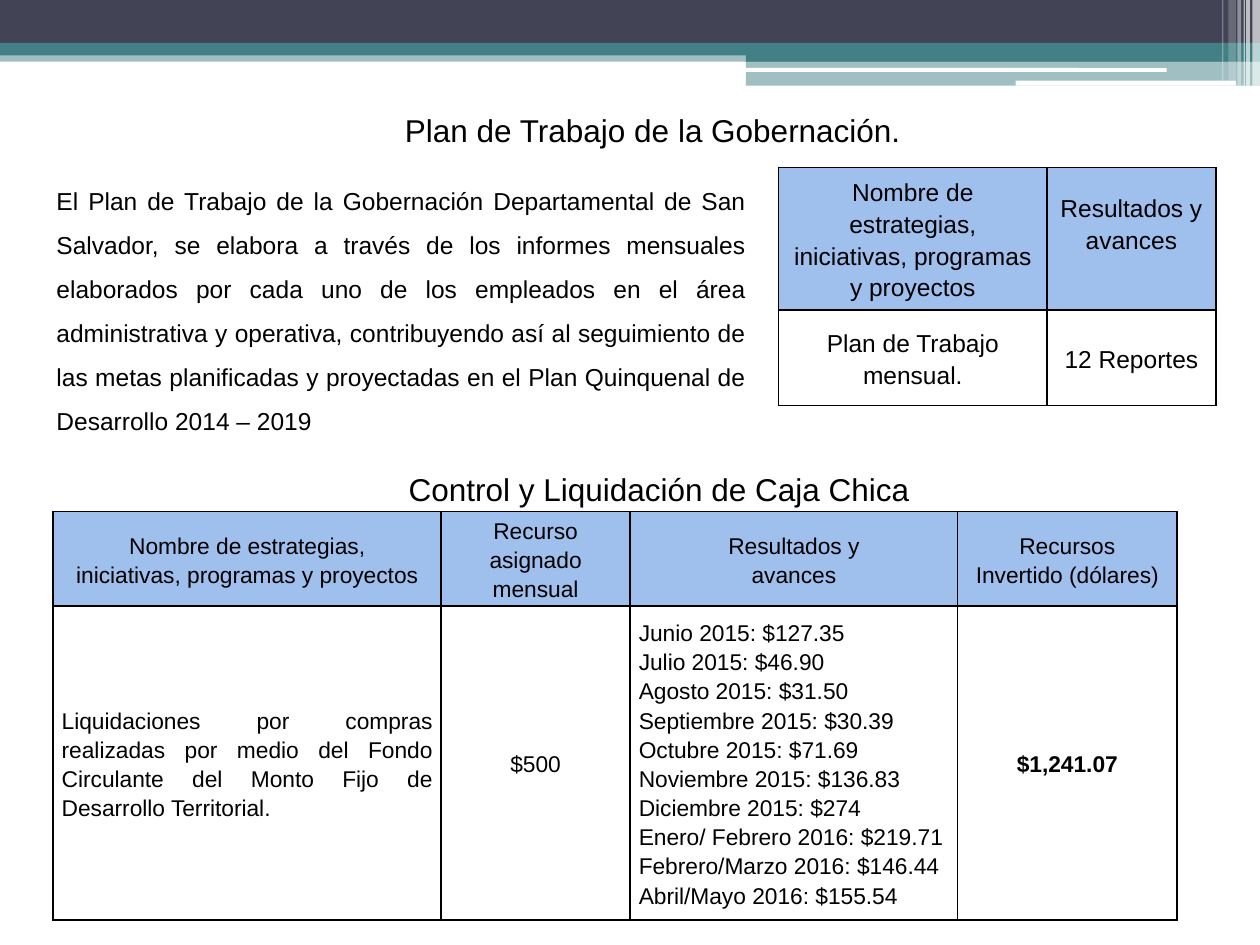
from lxml.etree import SubElement
from pptx import Presentation
from pptx.dml.color import RGBColor
from pptx.enum.shapes import MSO_SHAPE as SHAPE
from pptx.enum.text import MSO_ANCHOR as ANCHOR, PP_ALIGN as ALIGN
from pptx.oxml.ns import qn
from pptx.util import Inches, Pt

BLACK, WHITE, NAVY, TEAL, BLUE = "000000", "FFFFFF", "424456", "438086", "9FBFED"

BANDS = [
    (0, 0.4, 10, 0.09, TEAL, 50),
    (0, 0, 10, 0.34, NAVY, 100),
    (0, 0.34, 10, 0.1, TEAL, 100),
    (5.92, 0.39, 4.08, 0.1, TEAL, 100),
    (5.92, 0.48, 4.08, 0.2, TEAL, 50),
]
PILLS = [(5.91, 0.54, 3.35, 0.03), (8.06, 0.64, 1.75, 0.04)]
STRIPES = [
    (9.94, 0.06, 0.68, 65),
    (9.89, 0.03, 0.68, 65),
    (9.87, 0.01, 0.68, 60),
    (9.82, 0.03, 0.68, 40),
    (9.75, 0.06, 0.64, 20),
    (9.7, 0.01, 0.64, 30),
]

PLAN_TEXT = (
    "El Plan de Trabajo de la Gobernación Departamental de San Salvador, se elabora "
    "a través de los informes mensuales elaborados por cada uno de los empleados en "
    "el área administrativa y operativa, contribuyendo así al seguimiento de las metas "
    "planificadas y proyectadas en el Plan Quinquenal de Desarrollo 2014 – 2019"
)
NAME_HEADER = "Nombre de estrategias,\niniciativas, programas y proyectos"
RESULT_HEADER = "Resultados y\navances"
PLAN_ROWS = [
    [NAME_HEADER, RESULT_HEADER],
    ["Plan de Trabajo mensual.", "12 Reportes"],
]
CASH_ROWS = [
    [NAME_HEADER, "Recurso asignado mensual", RESULT_HEADER,
     "Recursos\nInvertido (dólares)"],
    ["Liquidaciones por compras realizadas por medio del Fondo Circulante del Monto "
     "Fijo de Desarrollo Territorial.",
     "$500",
     "Junio 2015: $127.35\nJulio 2015: $46.90\nAgosto 2015: $31.50\n"
     "Septiembre 2015: $30.39\nOctubre 2015: $71.69\nNoviembre 2015: $136.83\n"
     "Diciembre 2015: $274\nEnero/ Febrero 2016: $219.71\n"
     "Febrero/Marzo 2016: $146.44\nAbril/Mayo 2016: $155.54",
     "$1,241.07"],
]


def rgb(color):
    return RGBColor.from_string(color)


def set_attrs(obj, values):
    for name, value in values.items():
        setattr(obj, name, value)


def add_block(slide, x, y, w, h, color, opacity=100, kind=SHAPE.RECTANGLE):
    sp = slide.shapes.add_shape(kind, Inches(x), Inches(y), Inches(w), Inches(h))
    sp.shadow.inherit = False
    sp.line.fill.background()
    sp.fill.solid()
    sp.fill.fore_color.rgb = rgb(color)
    if opacity < 100:
        clr = sp.fill._xPr.find(qn("a:solidFill"))[0]
        SubElement(clr, qn("a:alpha"), val=str(opacity * 1000))


def write(tf, text, size, align, spacing, bold=False):
    tf.word_wrap = True
    for i, line in enumerate(text.split("\n")):
        p = tf.paragraphs[0] if i == 0 else tf.add_paragraph()
        set_attrs(p, {"alignment": align, "line_spacing": spacing})
        r = p.add_run()
        r.text = line
        set_attrs(r.font, {"name": "Arial", "size": Pt(size), "bold": bold})
        r.font.color.rgb = rgb(BLACK)


def add_text(slide, x, y, w, h, text, size, align=ALIGN.CENTER):
    box = slide.shapes.add_textbox(Inches(x), Inches(y), Inches(w), Inches(h))
    write(box.text_frame, text, size, align, 1.5)


def add_borders(cell):
    props = cell._tc.get_or_add_tcPr()
    for side in ("lnL", "lnR", "lnT", "lnB"):
        ln = SubElement(props, qn(f"a:{side}"), w=str(Pt(1)))
        SubElement(SubElement(ln, qn("a:solidFill")), qn("a:srgbClr"), val=BLACK)


def add_table(slide, x, y, widths, heights, rows, size, justified=(), bold=()):
    frame = slide.shapes.add_table(
        len(heights), len(widths), Inches(x), Inches(y),
        Inches(sum(widths)), Inches(sum(heights)))
    table = frame.table
    set_attrs(table, {"first_row": False, "horz_banding": False})
    for col, width in zip(table.columns, widths):
        col.width = Inches(width)
    for row, height in zip(table.rows, heights):
        row.height = Inches(height)
    for i, texts in enumerate(rows):
        for j, text in enumerate(texts):
            cell = table.cell(i, j)
            set_attrs(cell, {
                "margin_left": Inches(0.07), "margin_right": Inches(0.07),
                "margin_top": 0, "margin_bottom": 0,
                "vertical_anchor": ANCHOR.MIDDLE,
            })
            add_borders(cell)
            cell.fill.solid()
            cell.fill.fore_color.rgb = rgb(BLUE if i == 0 else WHITE)
            align = ALIGN.JUSTIFY if (i, j) in justified else ALIGN.CENTER
            write(cell.text_frame, text, size, align, 1.15, (i, j) in bold)
    return table


def add_banner(slide):
    for band in BANDS:
        add_block(slide, *band)
    for pill in PILLS:
        add_block(slide, *pill, WHITE, kind=SHAPE.ROUNDED_RECTANGLE)
    for x, w, h, opacity in STRIPES:
        add_block(slide, x, 0, w, h, WHITE, opacity)


def main():
    prs = Presentation()
    set_attrs(prs, {"slide_width": Inches(10), "slide_height": Inches(7.5)})
    slide = prs.slides.add_slide(prs.slide_layouts[6])
    add_banner(slide)
    add_text(slide, 1.49, 0.68, 7.38, 0.51, "Plan de Trabajo de la Gobernación.", 18)
    add_text(slide, 0.35, 1.31, 5.67, 2.22, PLAN_TEXT, 14, ALIGN.JUSTIFY)
    plan = add_table(slide, 6.18, 1.33, [2.13, 1.34], [1.13, 0.76], PLAN_ROWS, 14)
    plan.cell(0, 1).margin_bottom = Inches(0.25)
    add_text(slide, 1.54, 3.53, 7.38, 0.54, "Control y Liquidación de Caja Chica", 18)
    add_table(slide, 0.42, 4.06, [3.08, 1.5, 2.6, 1.74], [0.75, 2.49], CASH_ROWS, 13,
              justified=[(1, 0), (1, 2)], bold=[(1, 3)])
    prs.save("out.pptx")


if __name__ == "__main__":
    main()
